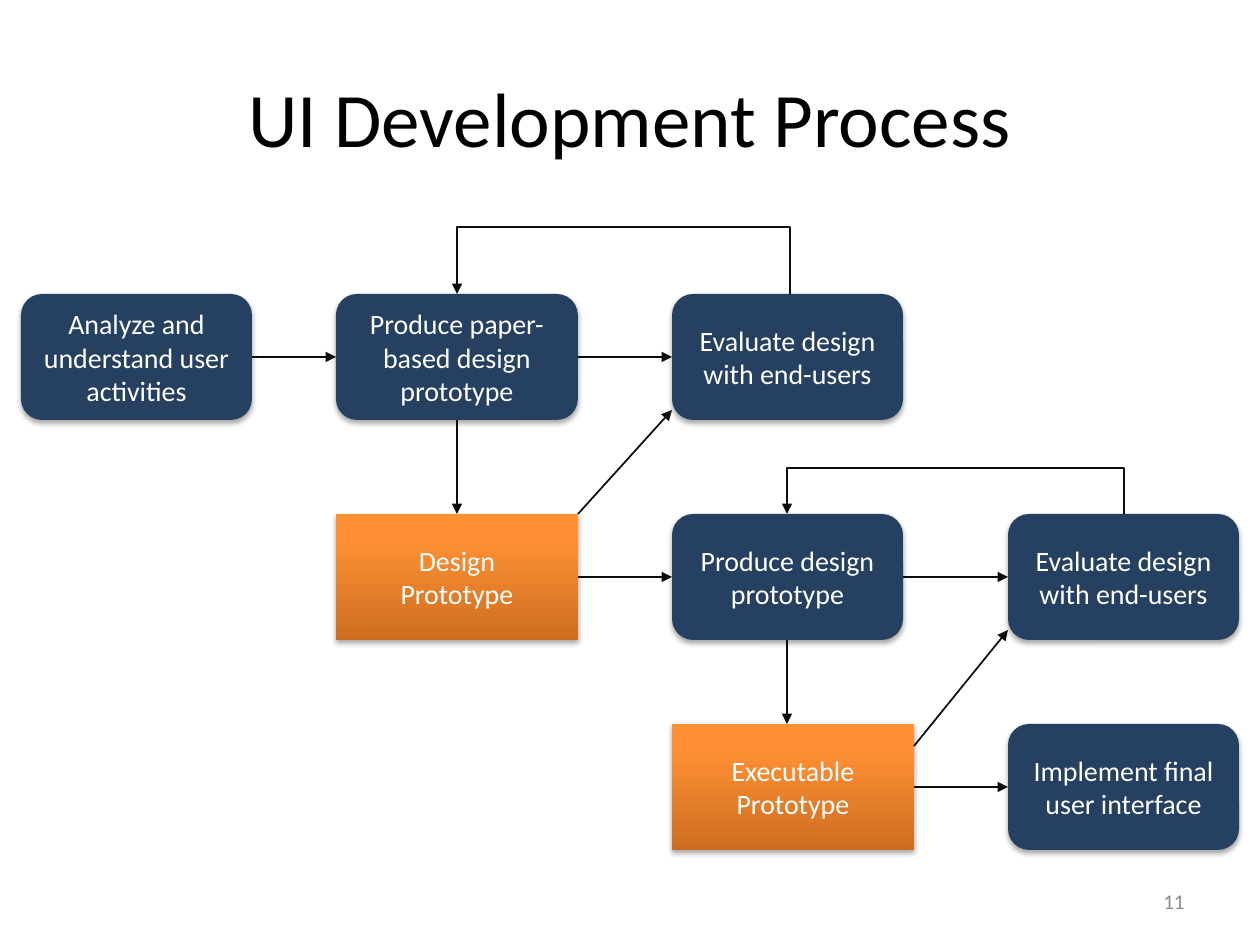
from lxml import etree
from pptx import Presentation
from pptx.dml.color import RGBColor
from pptx.enum.shapes import MSO_CONNECTOR, MSO_SHAPE
from pptx.enum.text import MSO_ANCHOR, PP_ALIGN
from pptx.oxml import parse_xml
from pptx.oxml.ns import qn
from pptx.util import Pt

SCALE = 914400 / 126
NAVY = RGBColor(0x25, 0x40, 0x61)
RUST = RGBColor(0xCC, 0x6E, 0x20)
ORANGE = RGBColor(0xFF, 0x90, 0x34)
INK = RGBColor(0x0D, 0x0D, 0x0D)
GREY = RGBColor(0x8C, 0x8C, 0x8C)
BLACK = RGBColor(0, 0, 0)
WHITE = RGBColor(255, 255, 255)
ROUND, RECT = MSO_SHAPE.ROUNDED_RECTANGLE, MSO_SHAPE.RECTANGLE
LINE = MSO_CONNECTOR.STRAIGHT
CENTER, RIGHT = PP_ALIGN.CENTER, PP_ALIGN.RIGHT
MIDDLE = MSO_ANCHOR.MIDDLE

# Grid of the diagram, in px
COLS = (21, 336, 672, 1008)
ROWS = (294, 514, 724)
SLIM, WIDE, HIGH = 231, 242, 126
# Connection sites of a box
TOP, LEFT, BOTTOM, EAST = range(4)

SHADOW = (
    '<a:effectLst xmlns:a="http://schemas.openxmlformats.org/drawingml/2006/main">'
    '<a:outerShdw blurRad="40000" dist="23000" dir="5400000" rotWithShape="0">'
    '<a:srgbClr val="000000"><a:alpha val="35000"/></a:srgbClr>'
    '</a:outerShdw></a:effectLst>'
)


def px(*nums):
    return [round(n * SCALE) for n in nums]


def write(shape, text, size, color, align):
    frame = shape.text_frame
    frame.text = text
    frame.word_wrap = True
    frame.vertical_anchor = MIDDLE
    for para in frame.paragraphs:
        para.alignment = align
        for run in para.runs:
            run.font.name = "Calibri"
            run.font.size = Pt(size)
            run.font.color.rgb = color


def add_box(slide, kind, col, row, width, text):
    box = slide.shapes.add_shape(kind, *px(COLS[col], ROWS[row], width, HIGH))
    box.line.fill.background()
    write(box, text, 16, WHITE, CENTER)
    props = box._element.spPr
    props.append(parse_xml(SHADOW))
    return box


def add_step(slide, col, row, text, width=SLIM):
    box = add_box(slide, ROUND, col, row, width, text)
    box.fill.solid()
    box.fill.fore_color.rgb = NAVY
    return box


def add_result(slide, col, row, text):
    box = add_box(slide, RECT, col, row, WIDE, text)
    box.fill.gradient()
    box.fill.gradient_angle = 90
    stops = box.fill.gradient_stops
    for stop, place, color in zip(stops, (0, 0.8), (RUST, ORANGE)):
        stop.position = place
        stop.color.rgb = color
    return box


def set_arrow(shape):
    shape.line.color.rgb = INK
    shape.line.width = Pt(1)
    etree.SubElement(shape.line._get_or_add_ln(), qn("a:tailEnd"), type="triangle")


def add_arrow(slide, start=(0, 0), end=(0, 0)):
    arrow = slide.shapes.add_connector(LINE, *px(*start, *end))
    set_arrow(arrow)
    etree.SubElement(arrow._element.spPr, qn("a:effectLst"))
    return arrow


def join(slide, first, out, second, into):
    arrow = add_arrow(slide)
    arrow.begin_connect(first, out)
    arrow.end_connect(second, into)


def add_loop(slide, start, end, top, base):
    """Draw a feedback arrow that rises from start and drops to end."""
    points = [px(start, base), px(start, top), px(end, top), px(end, base)]
    path = slide.shapes.build_freeform(*points[0], scale=1.0)
    path.add_line_segments(points[1:], close=False)
    loop = path.convert_to_shape()
    loop.fill.background()
    loop.shadow.inherit = False
    set_arrow(loop)


def main():
    deck = Presentation()
    deck.slide_width, deck.slide_height = px(1260, 945)
    slide = deck.slides.add_slide(deck.slide_layouts[5])

    # Title and slide number
    title = slide.shapes.title
    title.left, title.top, title.width, title.height = px(63, 38, 1134, 157)
    write(title, "UI Development Process", 44, BLACK, CENTER)
    number = slide.shapes.add_textbox(*px(903, 876, 294, 50))
    write(number, "11", 12, GREY, RIGHT)

    # Steps and the prototypes they yield
    study = add_step(slide, 0, 0, "Analyze and understand user activities")
    paper = add_step(slide, 1, 0, "Produce paper-based design prototype", WIDE)
    test = add_step(slide, 2, 0, "Evaluate design with end-users")
    draft = add_result(slide, 1, 1, "Design\vPrototype")
    build = add_step(slide, 2, 1, "Produce design prototype")
    retest = add_step(slide, 3, 1, "Evaluate design with end-users")
    demo = add_result(slide, 2, 2, "Executable Prototype")
    final = add_step(slide, 3, 2, "Implement final user interface")

    # Arrows between neighbours
    pairs = ((study, paper), (paper, test), (draft, build),
             (build, retest), (demo, final))
    for first, second in pairs:
        join(slide, first, EAST, second, LEFT)
    join(slide, paper, BOTTOM, draft, TOP)

    # Arrows that end away from a connection site
    add_arrow(slide, (787, 640), (787, 724))
    add_arrow(slide, (578, 514), (672, 410))
    add_arrow(slide, (914, 746), (1008, 630))

    # Feedback loops
    add_loop(slide, 790, 457, 227, ROWS[0])
    add_loop(slide, 1124, 787, 468, ROWS[1])

    deck.save("out.pptx")


if __name__ == "__main__":
    main()
